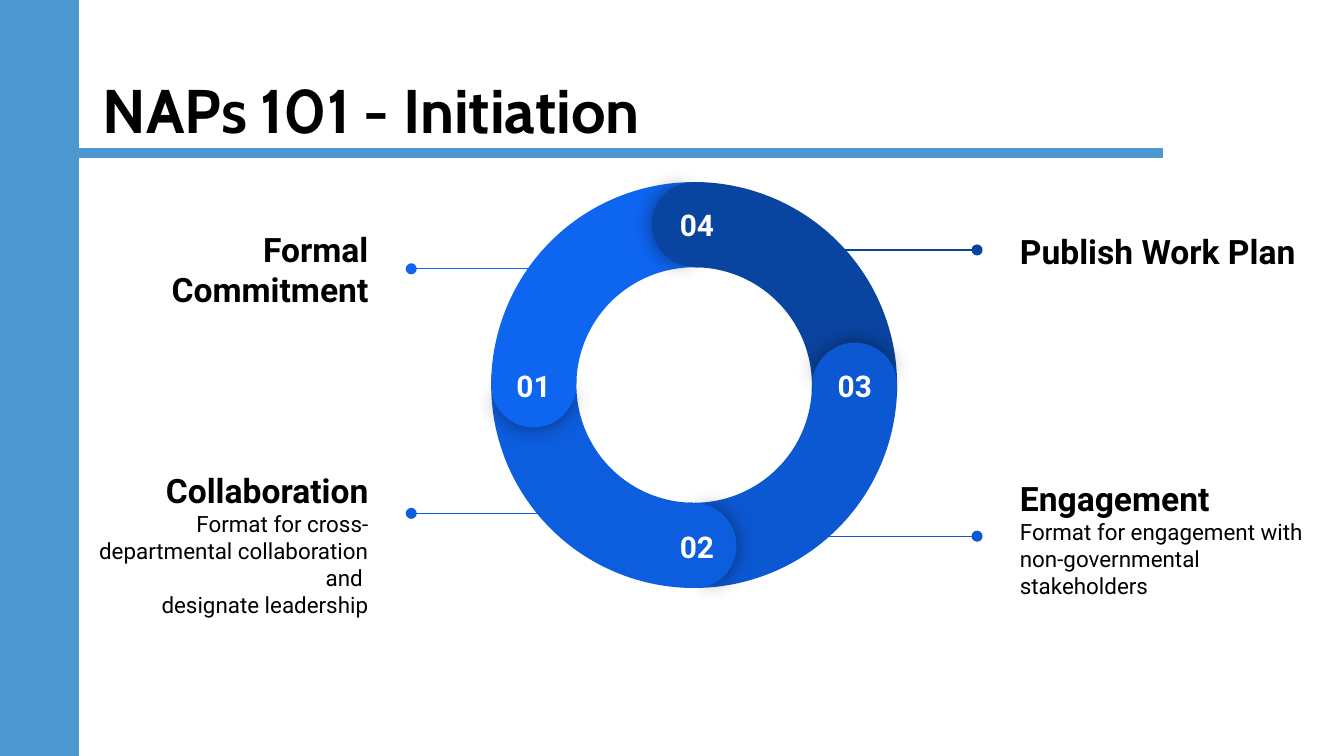
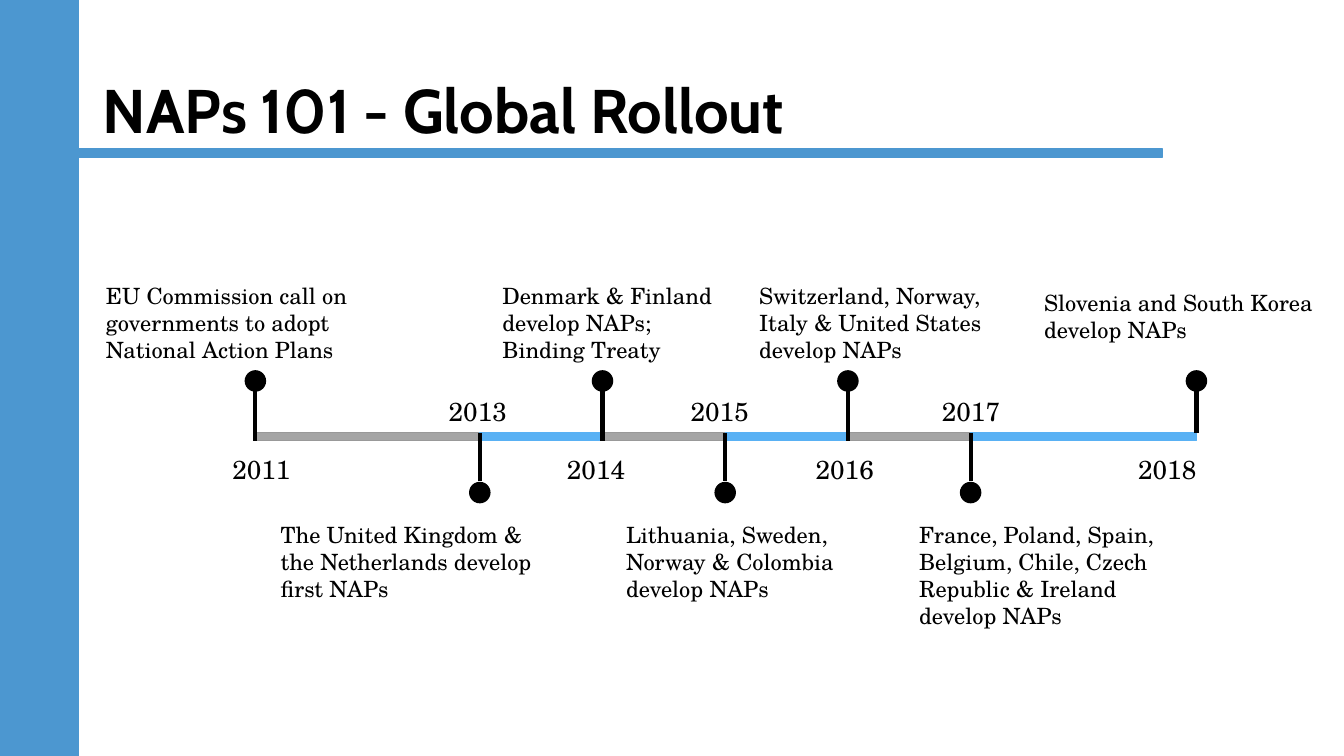
"""Builds two slides on National Action Plans: a four-step ring and a timeline."""
from itertools import accumulate
from math import cos, radians, sin

from lxml import etree
from pptx import Presentation
from pptx.dml.color import RGBColor
from pptx.enum.shapes import MSO_CONNECTOR, MSO_SHAPE
from pptx.enum.text import MSO_ANCHOR, MSO_AUTO_SIZE, PP_ALIGN
from pptx.oxml.ns import qn
from pptx.util import Inches, Pt

RECT, OVAL = MSO_SHAPE.RECTANGLE, MSO_SHAPE.OVAL
ARC, PIE = MSO_SHAPE.BLOCK_ARC, MSO_SHAPE.PIE
LINE = MSO_CONNECTOR.STRAIGHT
LEFT, CENTER, RIGHT = PP_ALIGN.LEFT, PP_ALIGN.CENTER, PP_ALIGN.RIGHT
TOP, MIDDLE = MSO_ANCHOR.TOP, MSO_ANCHOR.MIDDLE
BLACK, WHITE, BAND, GREY, SKY = "000000", "FFFFFF", "4C97D0", "A5A5A5", "59B1F4"
TITLE_FONT, RING_FONT, TIME_FONT = "Cabin", "Roboto", "TeX Gyre Schola"

prs = Presentation()
prs.slide_width, prs.slide_height = Inches(10), Inches(5.625)
U = prs.slide_width // 100
ROWS = prs.slide_height / U


def draw(s, kind, box, fill=None, line=None, width=0.75, rot=0, adj=()):
    """Draw a shape, connector or text box (kind None) at a box in grid units."""
    cells = [round(U * v) for v in box]
    if kind is None:
        return s.shapes.add_textbox(*cells)
    if kind is LINE:
        sp = s.shapes.add_connector(kind, *cells)
    else:
        sp = s.shapes.add_shape(kind, *cells)
        sp.rotation = rot
        for i, v in enumerate(adj):
            sp.adjustments[i] = v
        sp.fill.solid()
        sp.fill.fore_color.rgb = RGBColor.from_string(fill)
    if line:
        sp.line.color.rgb = RGBColor.from_string(line)
        sp.line.width = Pt(width)
    else:
        sp.line.fill.background()
    etree.SubElement(sp._element.spPr, qn("a:effectLst"))
    return sp


def write(sp, text, size=12, font=TIME_FONT, color=BLACK, bold=False, align=LEFT,
          anchor=TOP, margins=(1, 1), spacing=None):
    """Add one formatted paragraph to a shape."""
    tf = sp.text_frame
    tf.word_wrap, tf.auto_size, tf.vertical_anchor = True, MSO_AUTO_SIZE.NONE, anchor
    tf.margin_left = tf.margin_right = round(U * margins[0])
    tf.margin_top = tf.margin_bottom = round(U * margins[1])
    p = tf.add_paragraph() if tf.text else tf.paragraphs[0]
    p.text, p.alignment = text, align
    if spacing:
        p.line_spacing = spacing
    for r in p.runs:
        r.font.size, r.font.name, r.font.bold = Pt(size), font, bold
        r.font.color.rgb = RGBColor.from_string(color)


slides = []
for title in ("NAPs 101 - Initiation", "NAPs 101 - Global Rollout"):
    s = prs.slides.add_slide(prs.slide_layouts[5])
    sp = s.shapes.title
    sp.left, sp.top, sp.width, sp.height = (round(U * v) for v in (6.9, 3, 86.2, 10.9))
    write(sp, title, size=33, font=TITLE_FONT, bold=True, anchor=MIDDLE,
          margins=(0.75, 0.38), spacing=0.9)
    for box in ((0, 0, 5.8, ROWS), (0, 11.1, 86.5, 0.6)):
        draw(s, RECT, box, BAND, BAND, 1)
    slides.append(s)
ring, timeline = slides

CX, CY, RING, CAP = 51.65, 28.65, 30.2, 6.3
MID = (RING - CAP) / 2
steps = [("03", "0C58D3", 0), ("02", "0D5DDF", 90),
         ("01", "0E65F0", 180), ("04", "0944A1", 270)]
for num, color, angle in steps:
    draw(ring, ARC, (CX - RING / 2, CY - RING / 2, RING, RING), color,
         rot=(150 + angle) % 360, adj=(126.23, 181.77, 0.21))
for num, color, angle in steps:
    x, y = CX + MID * cos(radians(angle)), CY + MID * sin(radians(angle))
    cap = (x - CAP / 2, y - CAP / 2, CAP, CAP)
    sp = draw(ring, PIE, cap, color, rot=(90.7 + angle) % 360, adj=(61.9, 149.96))
    effects = sp._element.spPr.find(qn("a:effectLst"))
    shadow = etree.SubElement(effects, qn("a:outerShdw"), blurRad=str(Pt(11.2)),
                              dist="0", dir="0", algn="ctr", rotWithShape="0")
    clr = etree.SubElement(shadow, qn("a:srgbClr"), val=BLACK)
    etree.SubElement(clr, qn("a:alpha"), val="43000")
    draw(ring, PIE, cap, color, rot=(270 + angle) % 360, adj=(40.28, 171.84))
    nudge = 0.2 * abs(sin(radians(angle)))
    write(draw(ring, None, (x - 2.75 + nudge, y - 2.3, 5.5, 2.9)), num, size=16,
          font=RING_FONT, color=WHITE, bold=True, align=CENTER)

callouts = [
    (5.2, 12.95, RIGHT, "Formal Commitment", "", 42, 30.6, 20, "0E65F0"),
    (5.2, 33.4, RIGHT, "Collaboration",
     "Format for cross-departmental collaboration and \vdesignate leadership",
     44.9, 30.6, 38.2, "0D5DDF"),
    (74.9, 11.6, LEFT, "Publish Work Plan", "", 58.6, 72.7, 18.6, "0944A1"),
    (74.9, 33, LEFT, "Engagement",
     "Format for engagement with non-governmental stakeholders",
     58.6, 72.7, 39.9, "0C58D3"),
]
for x, y, align, head, body, start, end, level, color in callouts:
    sp = draw(ring, None, (x, y, 23.2, 14.1))
    write(sp, head, size=18, font=RING_FONT, bold=True, align=align, anchor=MIDDLE)
    if body:
        write(sp, body, font=RING_FONT, align=align, anchor=MIDDLE)
    sp = draw(ring, LINE, (start, level, end, level), line=color)
    etree.SubElement(sp.line._get_or_add_ln(), qn("a:tailEnd"), type="oval")

BAR, BAR_H, DOT = 32.2, 0.6, 1.5
stops = list(accumulate([19, 16.7, 9.13, 9.13, 9.13, 9.13, 16.8]))
events = [
    ("2011", 16.3, 6.9, 20, 21.6,
     "EU Commission call on governments to adopt National Action Plans"),
    ("2013", 32.4, 19.9, 37.8, 22.2,
     "The United Kingdom & the Netherlands develop first NAPs"),
    ("2014", 41.2, 36.4, 20, 18.3, "Denmark & Finland develop NAPs; Binding Treaty"),
    ("2015", 50.4, 45.6, 37.8, 19.6,
     "Lithuania, Sweden, Norway & Colombia develop NAPs"),
    ("2016", 59.7, 55.5, 20, 22.2,
     "Switzerland, Norway, Italy & United States develop NAPs"),
    ("2017", 69.1, 67.4, 37.8, 22.2,
     "France, Poland, Spain, Belgium, Chile, Czech Republic & Ireland develop NAPs"),
    ("2018", 83.7, 76.7, 20.5, 22.2, "Slovenia and South Korea develop NAPs"),
]
for i, (x, end) in enumerate(zip(stops, stops[1:])):
    fill, line = ((GREY, "999999"), (SKY, SKY))[i % 2]
    draw(timeline, RECT, (x, BAR, end - x, BAR_H), fill, line)
for i, (year, year_x, note_x, note_y, note_w, note) in enumerate(events):
    x, above = stops[i], i % 2 == 0
    foot = BAR if i == len(events) - 1 else BAR + BAR_H
    stem = (x, 29.1, x, foot) if above else (x, BAR, x, 35.8)
    draw(timeline, LINE, stem, line=BLACK, width=2.25)
    draw(timeline, OVAL, (x - DOT / 2, 27.6 if above else 35.9, DOT, DOT), BLACK, BLACK)
    write(draw(timeline, None, (year_x, 32.7 if above else 28.4, 8.2, 5)), year, size=14)
    write(draw(timeline, None, (note_x, note_y, note_w, 8.6)), note)

prs.save("out.pptx")
